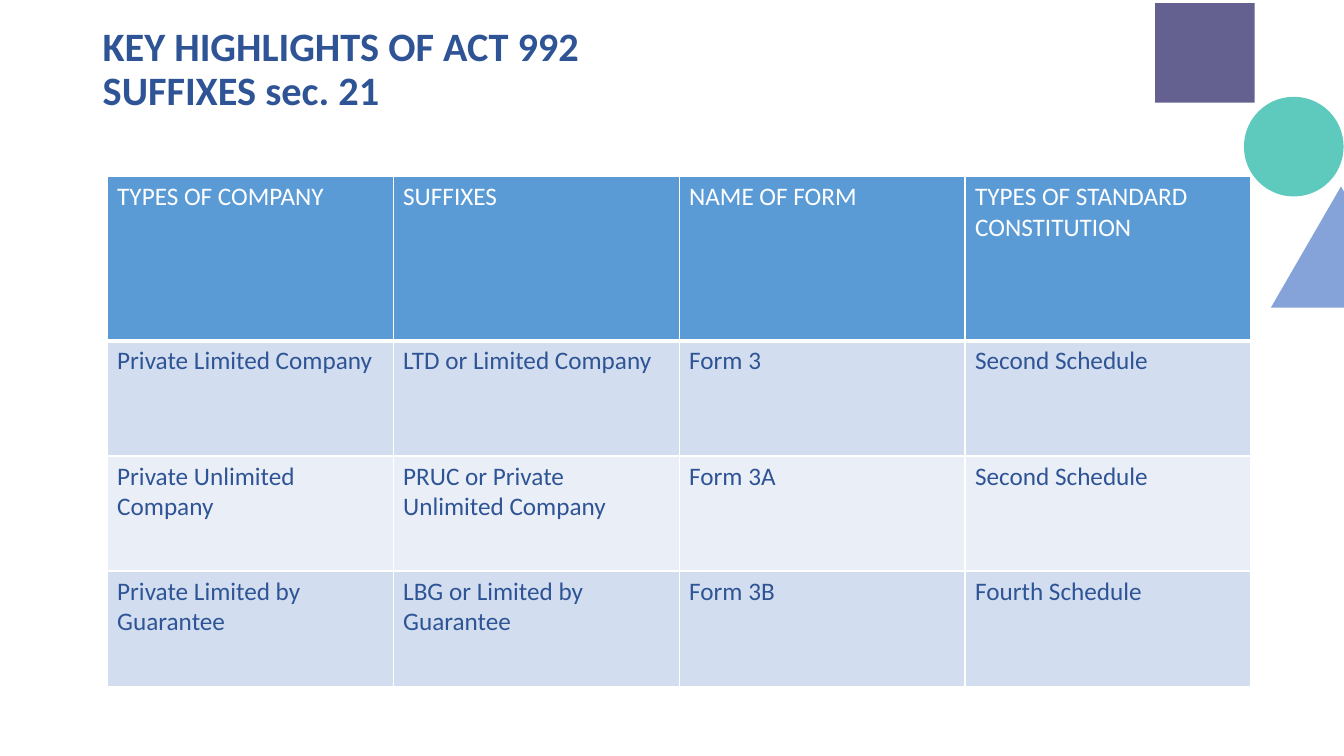
from lxml.etree import SubElement
from pptx import Presentation
from pptx.dml.color import RGBColor
from pptx.enum.shapes import MSO_SHAPE as Preset
from pptx.enum.text import MSO_ANCHOR as Anchor
from pptx.oxml.ns import qn
from pptx.util import Cm, Pt

WHITE = "FFFFFF"
NAVY = "2F5496"
HEADER_BLUE = "5B9BD5"
BANDS = ["D2DEEF", "EAEFF7"]

TITLE_LINES = ["KEY HIGHLIGHTS OF ACT 992", "SUFFIXES sec. 21"]
COMPANY_ROWS = [
    ["TYPES OF COMPANY", "SUFFIXES", "NAME OF FORM", "TYPES OF STANDARD CONSTITUTION"],
    ["Private Limited Company", "LTD or Limited Company", "Form 3", "Second Schedule"],
    ["Private Unlimited Company", "PRUC or Private Unlimited Company", "Form 3A", "Second Schedule"],
    ["Private Limited by Guarantee", "LBG or Limited by Guarantee", "Form 3B", "Fourth Schedule"],
]
ORNAMENTS = [
    (Preset.RECTANGLE, 0, 0, 2.51, 2.51, "2B2666", 73),
    (Preset.OVAL, 2.24, 2.36, 2.51, 2.51, "00AB98", 63),
    (Preset.ISOSCELES_TRIANGLE, 2.92, 4.62, 3.53, 3.05, "4472C4", 65),
]


def color(hex_string):
    return RGBColor.from_string(hex_string)


def set_font(paragraph, size, hex_string, bold=False):
    font = paragraph.font
    font.name = "Calibri"
    font.size = Pt(size)
    font.bold = bold
    font.color.rgb = color(hex_string)


def add_ornaments(slide, left, top):
    for preset, dx, dy, width, height, hex_string, opacity in ORNAMENTS:
        shape = slide.shapes.add_shape(
            preset, Cm(left + dx), Cm(top + dy), Cm(width), Cm(height))
        shape.shadow.inherit = False
        shape.fill.solid()
        shape.fill.fore_color.rgb = color(hex_string)
        fill_color = shape.fill._xPr.find(qn("a:solidFill"))[0]
        SubElement(fill_color, qn("a:alpha"), val=str(opacity * 1000))
        shape.line.fill.background()


def add_title(slide, left, top, width, height):
    box = slide.shapes.add_textbox(Cm(left), Cm(top), Cm(width), Cm(height))
    frame = box.text_frame
    frame.word_wrap = True
    frame.vertical_anchor = Anchor.MIDDLE
    paragraph = frame.paragraphs[0]
    paragraph.line_spacing = 0.9
    set_font(paragraph, 28.8, NAVY, bold=True)
    first, second = TITLE_LINES
    paragraph.add_run().text = first
    paragraph.add_line_break()
    paragraph.add_run().text = second


def set_borders(cell, top, bottom):
    properties = cell._tc.get_or_add_tcPr()
    for side, points in (("L", 1), ("R", 1), ("T", top), ("B", bottom)):
        line = SubElement(properties, qn(f"a:ln{side}"), w=str(Pt(points)))
        SubElement(SubElement(line, qn("a:solidFill")), qn("a:srgbClr"), val=WHITE)


def add_company_table(slide, left, top, width, header_height, row_height):
    row_count, column_count = len(COMPANY_ROWS), len(COMPANY_ROWS[0])
    height = header_height + row_height * (row_count - 1)
    table = slide.shapes.add_table(
        row_count, column_count, Cm(left), Cm(top), Cm(width), Cm(height)).table
    for column in table.columns:
        column.width = Cm(width / column_count)
    for index, texts in enumerate(COMPANY_ROWS):
        is_header = index == 0
        table.rows[index].height = Cm(header_height if is_header else row_height)
        for cell, text in zip(table.rows[index].cells, texts):
            set_borders(cell, top=3 if index == 1 else 1, bottom=3 if is_header else 1)
            cell.fill.solid()
            cell.fill.fore_color.rgb = color(
                HEADER_BLUE if is_header else BANDS[(index - 1) % 2])
            cell.text = text
            set_font(cell.text_frame.paragraphs[0], 18, WHITE if is_header else NAVY)


def main():
    presentation = Presentation()
    presentation.slide_width = Cm(33.87)
    presentation.slide_height = Cm(19.05)
    slide = presentation.slides.add_slide(presentation.slide_layouts[6])
    add_ornaments(slide, 29.11, 0.08)
    add_title(slide, 2.34, 0.56, 21.34, 2.44)
    add_company_table(slide, 2.7, 4.45, 28.83, 4.14, 2.9)
    presentation.save("out.pptx")


if __name__ == "__main__":
    main()
